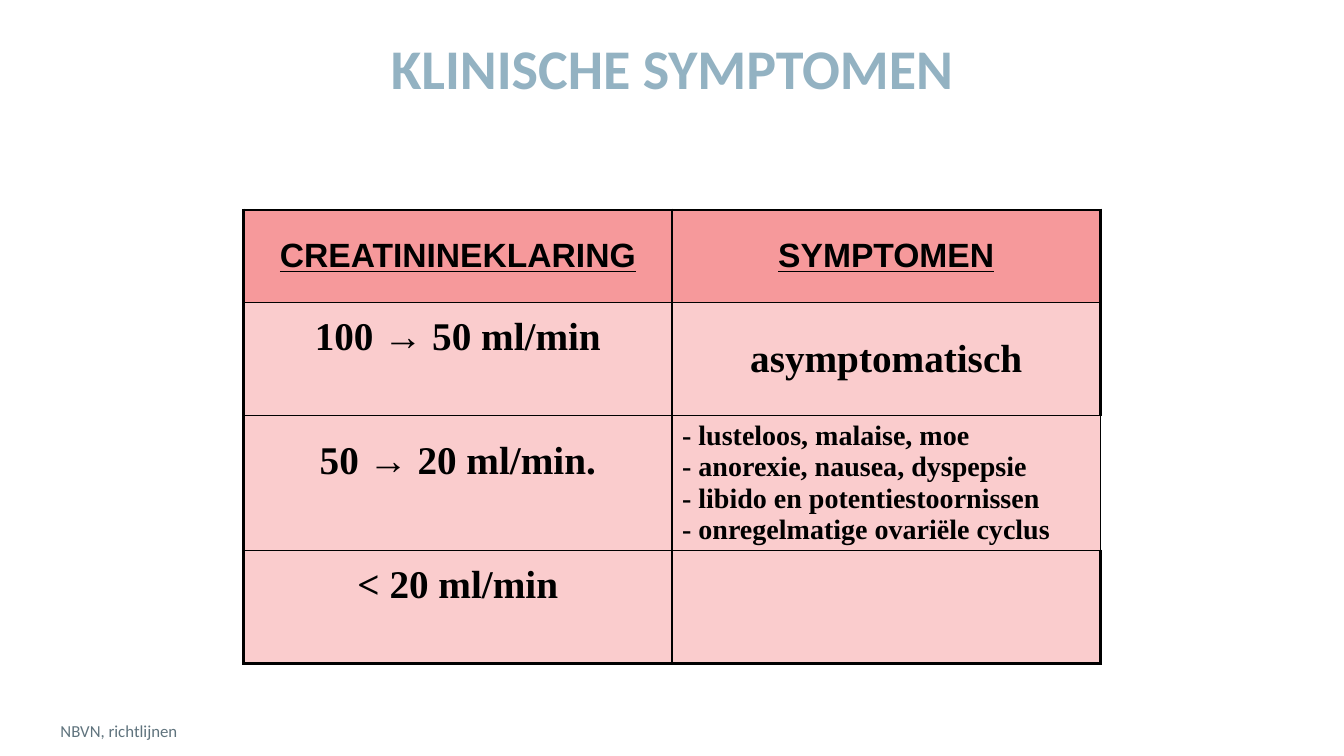
from lxml.etree import SubElement
from pptx import Presentation
from pptx.dml.color import RGBColor
from pptx.enum.text import MSO_ANCHOR as Anchor, MSO_AUTO_SIZE as AutoSize, PP_ALIGN as Align
from pptx.oxml.ns import qn
from pptx.util import Inches, Pt

COLUMNS, ROWS = 160, 90
THIN, THICK = 1, 2.25


def rgb(code):
    return RGBColor.from_string(code)


class SymptomSlide:
    """Holds the style and the slide; lengths are grid columns and rows."""
    TITLE, FOOTNOTE, INK = "93B2C2", "5F737D", "000000"
    HEADER, BODY = "F6999B", "FACCCD"
    SANS, SERIF, HEADING = "Calibri", "Times New Roman", "Arial"

    def __init__(self, deck):
        self.column, self.row = deck.slide_width / COLUMNS, deck.slide_height / ROWS
        self.slide = deck.slides.add_slide(deck.slide_layouts[5])

    def area(self, left, top, width, height):
        return (round(left * self.column), round(top * self.row),
                round(width * self.column), round(height * self.row))

    def run(self, paragraph, words, size, face, color, bold=True, underline=False):
        run = paragraph.add_run()
        run.text = words
        font = run.font
        font.size, font.name, font.bold, font.underline = Pt(size), face, bold, underline
        font.color.rgb = rgb(color)

    def frame(self, holder, anchor):
        frame = holder.text_frame
        frame.margin_left = frame.margin_right = frame.margin_top = frame.margin_bottom = 0
        frame.word_wrap, frame.auto_size, frame.vertical_anchor = True, AutoSize.NONE, anchor
        return frame.paragraphs[0]

    def title(self, words, *place):
        heading = self.slide.shapes.title
        heading.left, heading.top, heading.width, heading.height = self.area(*place)
        paragraph = self.frame(heading, Anchor.TOP)
        paragraph.alignment = Align.CENTER
        self.run(paragraph, words, 40, self.SANS, self.TITLE)

    def footnote(self, words, *place):
        source = self.slide.shapes.add_textbox(*self.area(*place))
        self.run(self.frame(source, Anchor.BOTTOM), words, 12, self.SANS, self.FOOTNOTE, bold=False)

    def table(self, left, top, widths, heights):
        place = self.area(left, top, sum(widths), sum(heights))
        table = self.slide.shapes.add_table(len(heights), len(widths), *place).table
        table.first_row = table.horz_banding = False
        for column, width in zip(table.columns, widths):
            column.width = round(width * self.column)
        for row, height in zip(table.rows, heights):
            row.height = round(height * self.row)
        return table

    def borders(self, cell, **points):
        properties = cell._tc.get_or_add_tcPr()
        for side in "LRTB":
            line = SubElement(properties, qn(f"a:ln{side}"), w=str(Pt(points[side])))
            fill = SubElement(line, qn("a:solidFill"))
            SubElement(fill, qn("a:srgbClr"), val=self.INK)

    def cell(self, cell, color, lines, size, face, align=Align.CENTER, underline=False, lift=0):
        """Fill a cell; lift is extra bottom margin that raises its text."""
        cell.fill.solid()
        cell.fill.fore_color.rgb = rgb(color)
        cell.vertical_anchor = Anchor.MIDDLE
        cell.margin_bottom = Inches(0.05) + round(lift * self.row)
        paragraph = cell.text_frame.paragraphs[0]
        paragraph.alignment = align
        for number, line in enumerate(lines):
            if number:
                paragraph.add_line_break()
            before, arrow, after = line.partition("→")
            for words, font in ((before, face), (arrow, self.HEADING), (after, face)):
                if words:
                    self.run(paragraph, words, size, font, self.INK, underline=underline)


HEADINGS = ["CREATININEKLARING", "SYMPTOMEN"]
STAGES = [
    ("100 → 50 ml/min", ["asymptomatisch"]),
    ("50 → 20 ml/min.", ["- lusteloos, malaise, moe", "- anorexie, nausea, dyspepsie",
                         "- libido en potentiestoornissen", "- onregelmatige ovariële cyclus"]),
    ("< 20 ml/min", []),
]


def main():
    deck = Presentation()
    deck.slide_width, deck.slide_height = Inches(13.33), Inches(7.5)
    page = SymptomSlide(deck)
    page.footnote("NBVN, richtlijnen", 7.2, 83.4, 106.2, 4.8)
    page.title("KLINISCHE SYMPTOMEN", 29, 4, 102, 16)

    table = page.table(29, 25, [51, 51], [11, 13.5, 16, 13.5])
    last = len(STAGES)
    for r in range(last + 1):
        for c in range(2):
            is_list = c == 1 and r and len(STAGES[r - 1][1]) > 1
            page.borders(table.cell(r, c), L=THIN if c else THICK,
                         R=THICK if c and not is_list else THIN,
                         T=THIN if r else THICK, B=THICK if r == last else THIN)

    for c, heading in enumerate(HEADINGS):
        page.cell(table.cell(0, c), page.HEADER, [heading], 24, page.HEADING, underline=True)
    for r, (clearance, symptoms) in enumerate(STAGES, start=1):
        page.cell(table.cell(r, 0), page.BODY, [clearance], 28, page.SERIF, lift=5.2)
        size, align = (20, Align.LEFT) if len(symptoms) > 1 else (28, Align.CENTER)
        page.cell(table.cell(r, 1), page.BODY, symptoms, size, page.SERIF, align)
    deck.save("out.pptx")


if __name__ == "__main__":
    main()
